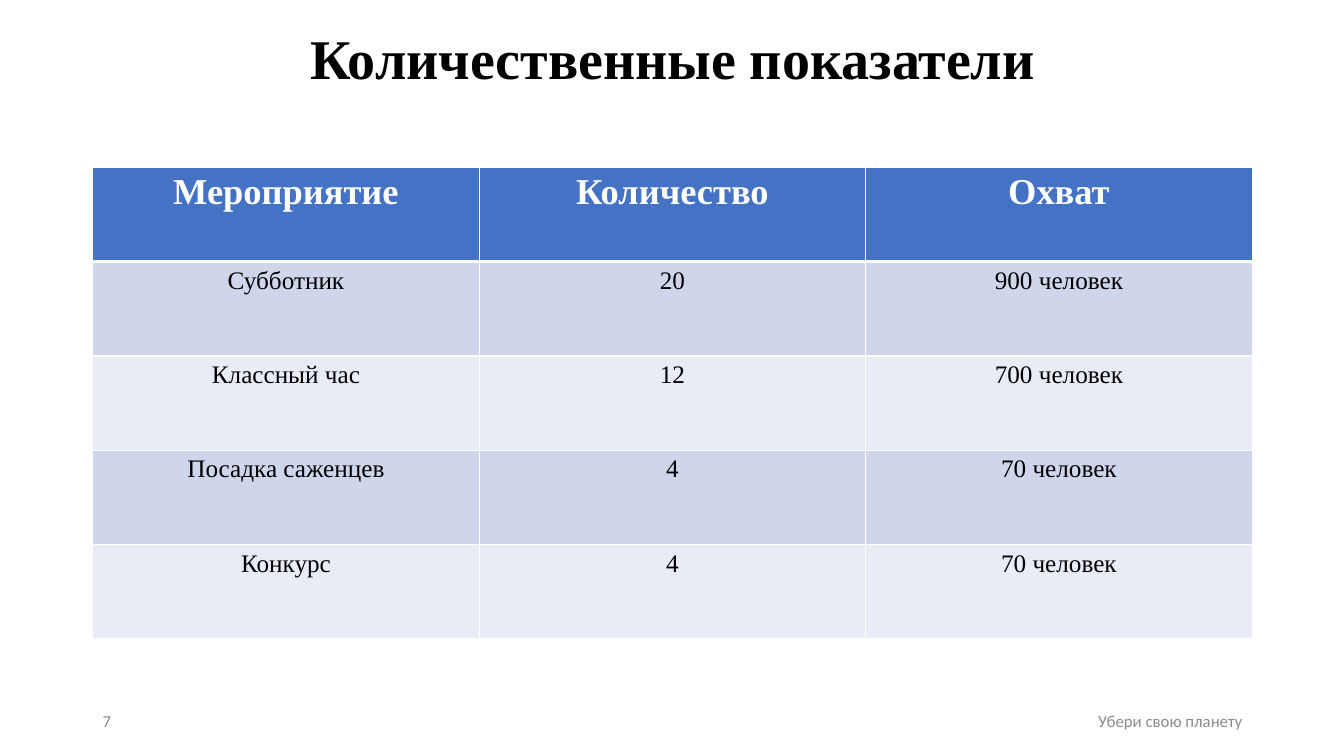
from dataclasses import dataclass

from lxml import etree
from pptx import Presentation
from pptx.dml.color import RGBColor
from pptx.enum.text import MSO_ANCHOR, PP_ALIGN
from pptx.oxml.ns import qn
from pptx.util import Inches, Pt

LEFT, CENTER, RIGHT = PP_ALIGN.LEFT, PP_ALIGN.CENTER, PP_ALIGN.RIGHT
TOP, MIDDLE = MSO_ANCHOR.TOP, MSO_ANCHOR.MIDDLE
TITLE_ONLY = 5


@dataclass(frozen=True)
class Theme:
    serif: str = "Times New Roman"
    sans: str = "Calibri"
    ink: str = "000000"
    muted: str = "8C8C8C"
    white: str = "FFFFFF"
    header: str = "4472C4"
    bands: tuple = ("CFD5EA", "E9EBF5")
    title_size: int = 40
    header_size: int = 26
    body_size: int = 18
    footer_size: int = 12


THEME = Theme()

ROWS = [
    ("Мероприятие", "Количество", "Охват"),
    ("Субботник", "20", "900 человек"),
    ("Классный час", "12", "700 человек"),
    ("Посадка саженцев", "4", "70 человек"),
    ("Конкурс", "4", "70 человек"),
]


def write(tf, text, size, color=THEME.ink, font=THEME.serif, bold=False,
          align=CENTER, anchor=TOP, spacing=None):
    tf.word_wrap = True
    tf.vertical_anchor = anchor
    p = tf.paragraphs[0]
    p.alignment = align
    if spacing:
        p.line_spacing = spacing
    r = p.add_run()
    r.text = text
    r.font.name = font
    r.font.size = Pt(size)
    r.font.bold = bold
    r.font.color.rgb = RGBColor.from_string(color)


def set_borders(cell, **widths):
    """Draw white cell borders; widths are in points, keyed by side."""
    tcPr = cell._tc.get_or_add_tcPr()
    for side in "LRTB":
        ln = etree.SubElement(tcPr, qn(f"a:ln{side}"), w=str(Pt(widths.get(side, 1))))
        fill = etree.SubElement(ln, qn("a:solidFill"))
        etree.SubElement(fill, qn("a:srgbClr"), val=THEME.white)


def add_title(slide, text, left, top, width, height):
    sp = slide.shapes.title
    sp.left, sp.top, sp.width, sp.height = map(Inches, (left, top, width, height))
    write(sp.text_frame, text, THEME.title_size, bold=True, spacing=0.9)


def add_indicators(slide, rows, left, top, width, height):
    frame = slide.shapes.add_table(len(rows), len(rows[0]),
                                   *map(Inches, (left, top, width, height)))
    table = frame.table
    for col in table.columns:
        col.width = Inches(width / len(rows[0]))
    for i, values in enumerate(rows):
        table.rows[i].height = Inches(height / len(rows))
        for j, value in enumerate(values):
            cell = table.cell(i, j)
            # The rule under the header is shared by the first two rows
            set_borders(cell, B=3 if i == 0 else 1, T=3 if i == 1 else 1)
            cell.fill.solid()
            if i == 0:
                fill = THEME.header
                write(cell.text_frame, value, THEME.header_size, THEME.white, bold=True)
            else:
                fill = THEME.bands[(i - 1) % 2]
                write(cell.text_frame, value, THEME.body_size)
            cell.fill.fore_color.rgb = RGBColor.from_string(fill)


def add_footer(slide, number, text, left, top, width, height):
    number_width, text_width = 3, 8.12
    parts = [
        (text, left + width - text_width, text_width, RIGHT),
        (number, left, number_width, LEFT),
    ]
    for label, x, w, align in parts:
        sp = slide.shapes.add_textbox(*map(Inches, (x, top, w, height)))
        write(sp.text_frame, label, THEME.footer_size, THEME.muted, THEME.sans,
              align=align, anchor=MIDDLE)


def main():
    prs = Presentation()
    prs.slide_width, prs.slide_height = Inches(13.33), Inches(7.5)
    slide = prs.slides.add_slide(prs.slide_layouts[TITLE_ONLY])
    left, width = 0.92, 11.5

    # Title
    add_title(slide, "Количественные показатели", left, 0.26, width, 0.87)
    # Footer
    add_footer(slide, "7", "Убери свою планету", left, 6.95, width, 0.4)
    # Table of events
    add_indicators(slide, ROWS, left, 1.66, width, 4.68)

    prs.save("out.pptx")


if __name__ == "__main__":
    main()
